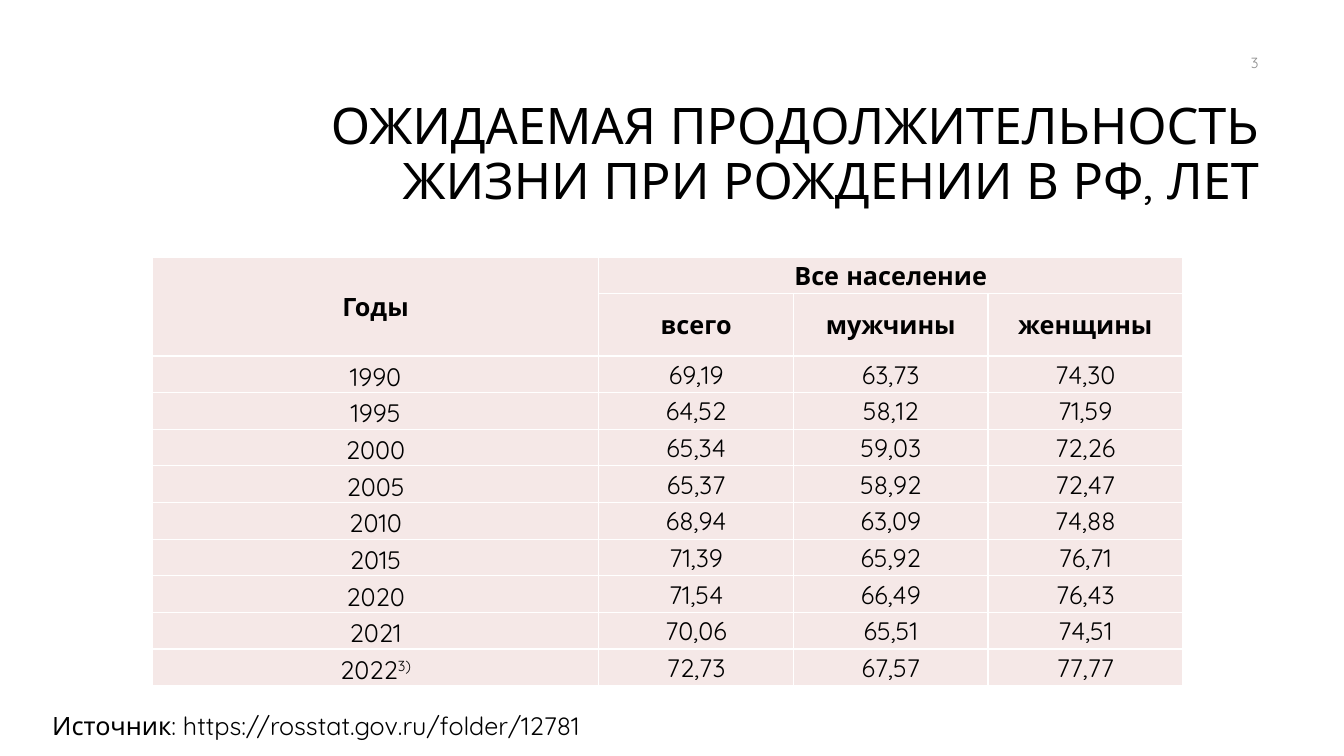
from dataclasses import dataclass

from lxml import etree
from pptx import Presentation
from pptx.dml.color import RGBColor
from pptx.enum.text import MSO_ANCHOR, MSO_AUTO_SIZE, PP_ALIGN
from pptx.oxml.ns import qn
from pptx.util import Inches, Pt

MIDDLE, BOTTOM = MSO_ANCHOR.MIDDLE, MSO_ANCHOR.BOTTOM
TOP = MSO_ANCHOR.TOP
LEFT, CENTER, RIGHT = PP_ALIGN.LEFT, PP_ALIGN.CENTER, PP_ALIGN.RIGHT
NO_AUTOFIT, GROW = MSO_AUTO_SIZE.NONE, MSO_AUTO_SIZE.SHAPE_TO_FIT_TEXT

BLACK = RGBColor(0x00, 0x00, 0x00)
GREY = RGBColor(0x8C, 0x8C, 0x8C)
WHITE = RGBColor(0xFF, 0xFF, 0xFF)
ROSE = RGBColor(0xF5, 0xE8, 0xE7)

FONT = "Quicksand"
SLIDE_WIDTH, SLIDE_HEIGHT = Inches(13.33), Inches(7.5)
COLUMN, ROW = SLIDE_WIDTH / 100, SLIDE_HEIGHT / 100

YEARS_WIDTH, FIGURES_WIDTH = 33.23, 14.48
LINE_HEIGHT, SUBHEAD_HEIGHT = 4.85, 8.25


@dataclass(frozen=True)
class Area:
    left: float
    top: float
    width: float
    height: float

    def place(self) -> tuple[int, int, int, int]:
        return (round(self.left * COLUMN), round(self.top * ROW),
                round(self.width * COLUMN), round(self.height * ROW))


@dataclass(frozen=True)
class Caption:
    text: str
    area: Area
    size: float
    color: RGBColor
    align: PP_ALIGN
    anchor: MSO_ANCHOR
    wrap: bool
    fit: MSO_AUTO_SIZE


@dataclass(frozen=True)
class LifeExpectancy:
    year: str
    total: str
    men: str
    women: str
    footnote: str = ""


TITLE = Caption("ОЖИДАЕМАЯ ПРОДОЛЖИТЕЛЬНОСТЬ ЖИЗНИ ПРИ РОЖДЕНИИ В РФ, ЛЕТ",
                Area(23.78, 11.2, 70.67, 18.8), 36, BLACK, RIGHT, MIDDLE, True, NO_AUTOFIT)
CAPTIONS = (
    Caption("Источник: https://rosstat.gov.ru/folder/12781",
            Area(3.15, 93.33, 42.4, 5.33), 18, BLACK, LEFT, TOP, False, GROW),
    Caption("3", Area(71.87, 5.6, 22.5, 5.33), 10.5, GREY, RIGHT, MIDDLE, True, NO_AUTOFIT),
)
TABLE_AREA = Area(11.33, 34, 76.67, 56.75)
HEADINGS = {(0, 0): "Годы", (0, 1): "Все население",
            (1, 1): "всего", (1, 2): "мужчины", (1, 3): "женщины"}
RECORDS = (
    LifeExpectancy("1990", "69,19", "63,73", "74,30"),
    LifeExpectancy("1995", "64,52", "58,12", "71,59"),
    LifeExpectancy("2000", "65,34", "59,03", "72,26"),
    LifeExpectancy("2005", "65,37", "58,92", "72,47"),
    LifeExpectancy("2010", "68,94", "63,09", "74,88"),
    LifeExpectancy("2015", "71,39", "65,92", "76,71"),
    LifeExpectancy("2020", "71,54", "66,49", "76,43"),
    LifeExpectancy("2021", "70,06", "65,51", "74,51"),
    LifeExpectancy("2022", "72,73", "67,57", "77,77", "3)"),
)


def add_text(paragraph, text: str, size: float, color: RGBColor = BLACK, bold: bool = False):
    run = paragraph.add_run()
    run.text = text
    run.font.name = FONT
    run.font.size = Pt(size)
    run.font.bold = bold
    run.font.color.rgb = color
    return run


def write_caption(shape, caption: Caption) -> None:
    shape.left, shape.top, shape.width, shape.height = caption.area.place()
    frame = shape.text_frame
    frame.word_wrap = caption.wrap
    frame.auto_size = caption.fit
    frame.vertical_anchor = caption.anchor
    paragraph = frame.paragraphs[0]
    paragraph.alignment = caption.align
    add_text(paragraph, caption.text, caption.size, caption.color)


def style_cell(cell) -> None:
    properties = cell._tc.get_or_add_tcPr()
    for side in ("a:lnL", "a:lnR", "a:lnT", "a:lnB"):
        border = etree.SubElement(properties, qn(side), w=str(Pt(1)))
        paint = etree.SubElement(border, qn("a:solidFill"))
        etree.SubElement(paint, qn("a:srgbClr"), val=str(WHITE))
    cell.fill.solid()
    cell.fill.fore_color.rgb = ROSE
    cell.margin_left = cell.margin_right = cell.margin_top = Inches(0.01)
    cell.margin_bottom = 0


def write_cell(cell, text: str, bold: bool = False, anchor: MSO_ANCHOR = MIDDLE,
               footnote: str = "") -> None:
    cell.vertical_anchor = anchor
    paragraph = cell.text_frame.paragraphs[0]
    paragraph.alignment = CENTER
    add_text(paragraph, text, 18, bold=bold)
    if footnote:
        mark = add_text(paragraph, footnote, 18)
        mark._r.get_or_add_rPr().set("baseline", "30000")


def add_life_table(slide) -> None:
    table = slide.shapes.add_table(len(RECORDS) + 2, 4, *TABLE_AREA.place()).table
    table.first_row = table.horz_banding = False
    for index, column in enumerate(table.columns):
        column.width = round((FIGURES_WIDTH if index else YEARS_WIDTH) * COLUMN)
    for index, row in enumerate(table.rows):
        row.height = round((SUBHEAD_HEIGHT if index == 1 else LINE_HEIGHT) * ROW)
    for cell in table.iter_cells():
        style_cell(cell)
    table.cell(0, 0).merge(table.cell(1, 0))
    table.cell(0, 1).merge(table.cell(0, 3))
    for position, heading in HEADINGS.items():
        write_cell(table.cell(*position), heading, bold=True)
    for line, record in enumerate(RECORDS, start=2):
        write_cell(table.cell(line, 0), record.year, anchor=BOTTOM, footnote=record.footnote)
        for column, figure in enumerate((record.total, record.men, record.women), start=1):
            write_cell(table.cell(line, column), figure)


def main() -> None:
    presentation = Presentation()
    presentation.slide_width, presentation.slide_height = SLIDE_WIDTH, SLIDE_HEIGHT
    slide = presentation.slides.add_slide(presentation.slide_layouts[5])
    title = slide.shapes.title
    write_caption(title, TITLE)
    title.text_frame.paragraphs[0].line_spacing = 0.9
    add_life_table(slide)
    for caption in CAPTIONS:
        write_caption(slide.shapes.add_textbox(*caption.area.place()), caption)
    presentation.save("out.pptx")


if __name__ == "__main__":
    main()
